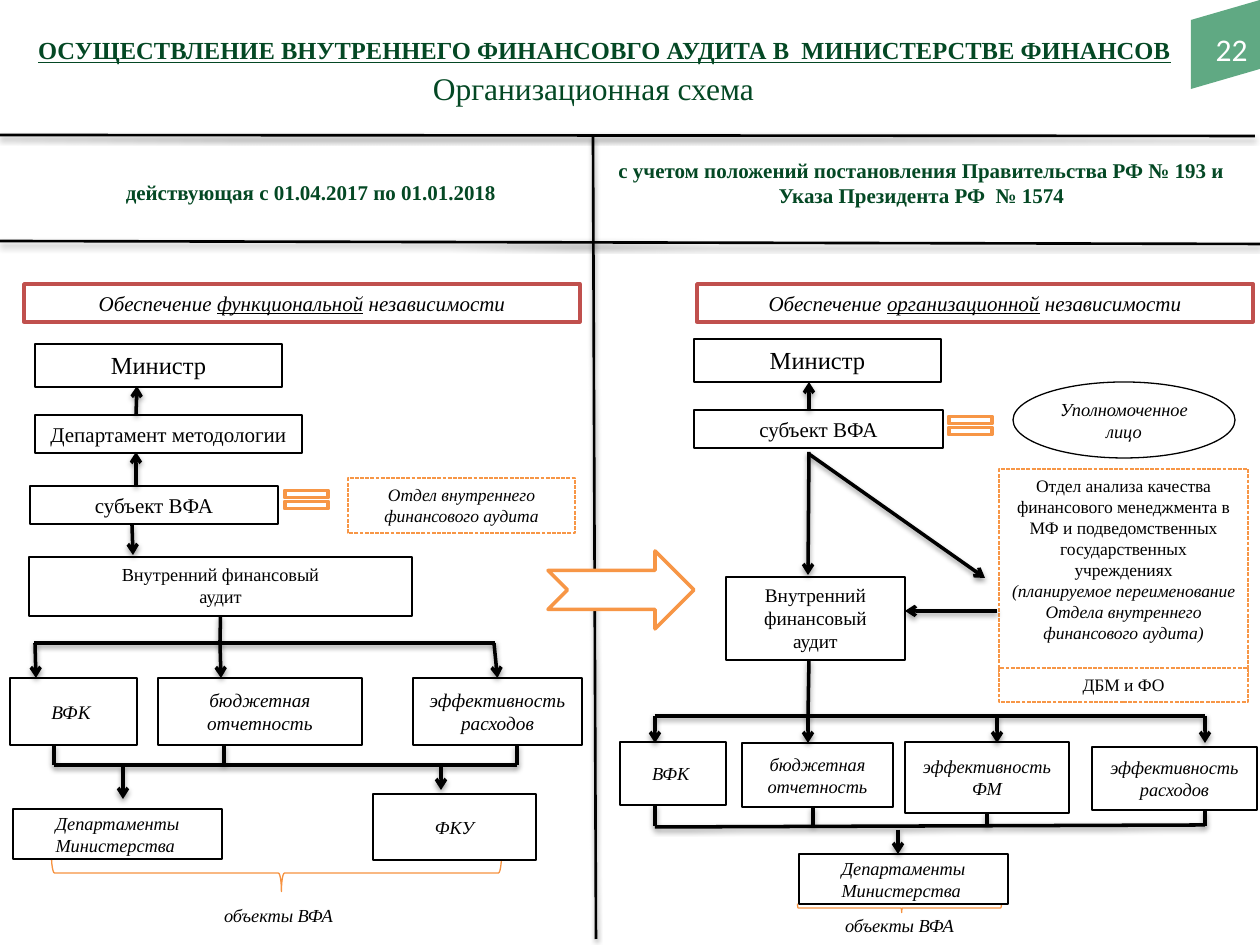
from dataclasses import dataclass, field
from typing import Optional

from lxml.etree import SubElement
from pptx import Presentation
from pptx.dml.color import RGBColor
from pptx.enum.dml import MSO_LINE_DASH_STYLE as Dash
from pptx.enum.shapes import MSO_CONNECTOR as Link, MSO_SHAPE as Kind
from pptx.enum.text import MSO_ANCHOR as Anchor, MSO_AUTO_SIZE as Fit, PP_ALIGN as Align
from pptx.oxml import parse_xml
from pptx.oxml.ns import nsdecls, qn
from pptx.util import Emu, Pt

SERIF = "Times New Roman"
BLACK, WHITE, GREEN = "000000", "FFFFFF", "044824"
ORANGE, BRACE_ORANGE, RED = "F79646", "F69240", "C0504D"
TOP, BOTTOM = 0, 2
SHADOW = (
    f'<a:effectLst {nsdecls("a")}><a:outerShdw blurRad="39370" dist="20320" dir="5400000"'
    ' rotWithShape="0"><a:srgbClr val="000000"><a:alpha val="38000"/></a:srgbClr>'
    "</a:outerShdw></a:effectLst>"
)


@dataclass(frozen=True)
class Words:
    """Paragraphs are strings, or tuples of (text, font overrides) runs."""
    paragraphs: tuple
    size: float
    font: dict = field(default_factory=dict)
    color: str = BLACK
    face: str = SERIF
    align: Align = Align.CENTER
    anchor: Anchor = Anchor.TOP


@dataclass(frozen=True)
class Box:
    area: tuple[int, int, int, int]
    words: Optional[Words] = None
    kind: Kind = Kind.RECTANGLE
    line: str = BLACK
    width: float = 0.75
    dashed: bool = False
    key: str = ""


@dataclass(frozen=True)
class Line:
    start: tuple[int, int]
    end: tuple[int, int]
    arrow: bool = False
    width: float = 2
    joined: Optional[tuple[str, int]] = None


def px(length: int) -> Emu:
    return Emu(round(length * 914400 / 126))


def rgb(color: str) -> RGBColor:
    return RGBColor.from_string(color)


def write(frame, words: Words) -> None:
    for name, value in {"word_wrap": True, "auto_size": Fit.NONE,
                        "vertical_anchor": words.anchor,
                        "margin_left": Pt(7.2), "margin_right": Pt(7.2),
                        "margin_top": Pt(3.6), "margin_bottom": Pt(3.6)}.items():
        setattr(frame, name, value)
    for number, runs in enumerate(words.paragraphs):
        paragraph = frame.add_paragraph() if number else frame.paragraphs[0]
        paragraph.alignment = words.align
        for text, changes in ((runs, {}),) if isinstance(runs, str) else runs:
            run = paragraph.add_run()
            run.text = text
            run.font.color.rgb = rgb(words.color)
            formats = {"name": words.face, "size": Pt(words.size)} | words.font | changes
            for name, value in formats.items():
                setattr(run.font, name, value)


def draw_box(slide, box: Box):
    shape = slide.shapes.add_shape(box.kind, *map(px, box.area))
    shape.shadow.inherit = False
    shape.fill.solid()
    shape.fill.fore_color.rgb = rgb(WHITE)
    shape.line.color.rgb = rgb(box.line)
    shape.line.width = Pt(box.width)
    if box.dashed:
        shape.line.dash_style = Dash.SQUARE_DOT
    if box.words:
        write(shape.text_frame, box.words)
    return shape


def draw_brace(slide, area: tuple[int, int, int, int]) -> None:
    brace = draw_box(slide, Box(area, kind=Kind.LEFT_BRACE, line=BRACE_ORANGE))
    brace.fill.background()
    brace.rotation = 270
    brace.adjustments[0], brace.adjustments[1] = 0.083, 0.511


def draw_line(slide, line: Line, boxes: dict) -> None:
    connector = slide.shapes.add_connector(Link.STRAIGHT, *map(px, line.start + line.end))
    connector.line.color.rgb = rgb(BLACK)
    connector.line.width = Pt(line.width)
    if line.arrow:
        SubElement(connector.line._get_or_add_ln(), qn("a:tailEnd"), type="arrow")
    connector._element.spPr.append(parse_xml(SHADOW))
    if line.joined:
        key, side = line.joined
        connector.end_connect(boxes[key], side)


def draw_text(slide, area: tuple[int, int, int, int], words: Words) -> None:
    write(slide.shapes.add_textbox(*map(px, area)).text_frame, words)


def plain(size: float, *paragraphs) -> Words:
    return Words(paragraphs, size)


def italic(size: float, text: str, anchor: Anchor = Anchor.MIDDLE) -> Words:
    return Words((text,), size, {"italic": True}, anchor=anchor)


def independence(kind: str) -> Words:
    runs = (("Обеспечение ", {}), (kind, {"underline": True}), (" независимости", {}))
    return Words((runs,), 12, {"italic": True})


AUDIT = ("Внутренний финансовый", "аудит")
DEPARTMENTS = italic(10.5, "Департаменты Министерства ")
QUALITY = plain(
    10,
    "Отдел анализа качества финансового менеджмента в МФ и подведомственных"
    " государственных учреждениях",
    (("(планируемое переименование Отдела внутреннего финансового аудита)",
      {"italic": True}),),
)
DIVIDERS = [Line((0, 241), (1260, 244), width=1.5),
            Line((596, 939), (593, 136), width=1.5),
            Line((0, 135), (1255, 136), width=1.5)]
BOXES = [
    # Current scheme
    Box((24, 284, 556, 38), independence("функциональной"), line=RED, width=2),
    Box((35, 344, 247, 43), plain(14, "Министр")),
    Box((35, 415, 267, 38), plain(12, "Департамент методологии")),
    Box((30, 486, 248, 38), plain(12, "субъект ВФА")),
    Box((277, 484, 59, 31), kind=Kind.MATH_EQUAL, line=ORANGE, width=2),
    Box((348, 478, 227, 55), italic(10, "Отдел внутреннего финансового аудита", Anchor.TOP),
        line=ORANGE, dashed=True),
    Box((29, 557, 383, 59), plain(10.5, *AUDIT), key="current audit"),
    Box((10, 678, 127, 67), italic(11, "ВФК ")),
    Box((158, 678, 204, 67), italic(11, "бюджетная отчетность")),
    Box((413, 678, 169, 67), italic(11, "эффективность расходов"), key="current spending"),
    Box((13, 809, 209, 50), DEPARTMENTS),
    Box((373, 794, 163, 66), italic(10.5, "ФКУ")),
    # Transition between the schemes
    Box((548, 551, 146, 78), kind=Kind.NOTCHED_RIGHT_ARROW, line=ORANGE, width=2),
    # New scheme
    Box((697, 284, 556, 38), independence("организационной"), line=RED, width=2),
    Box((694, 339, 247, 43), plain(14, "Министр")),
    Box((694, 410, 249, 38), plain(12, "субъект ВФА")),
    Box((941, 410, 59, 31), kind=Kind.MATH_EQUAL, line=ORANGE, width=2),
    Box((1013, 382, 222, 76), italic(10.5, "Уполномоченное лицо"), Kind.OVAL),
    Box((999, 469, 249, 204), QUALITY, line=ORANGE, dashed=True),
    Box((999, 668, 249, 34), plain(10, "ДБМ и ФО"), line=ORANGE, dashed=True),
    Box((726, 577, 179, 83), plain(11, *AUDIT)),
    Box((620, 742, 106, 63), italic(10.5, "ВФК ")),
    Box((742, 743, 151, 64), italic(10.5, "бюджетная отчетность")),
    Box((905, 742, 164, 71), italic(10.5, "эффективность ФМ"), key="new management"),
    Box((1092, 747, 165, 63), italic(10.5, "эффективность расходов")),
    Box((799, 854, 209, 50), DEPARTMENTS),
]
LINES = [
    # Current scheme: chain, split into directions, merge into objects
    Line((136, 415), (137, 386), True),
    Line((136, 486), (136, 452), True),
    Line((132, 524), (133, 555), True),
    Line((220, 643), (220, 616), joined=("current audit", BOTTOM)),
    Line((34, 643), (495, 643)),
    Line((35, 643), (36, 678), True),
    Line((220, 643), (221, 678), True),
    Line((494, 643), (497, 678), True, joined=("current spending", TOP)),
    *[Line((x, 765), (x, 745)) for x in (54, 224, 517)],
    Line((54, 765), (517, 765)),
    Line((123, 766), (123, 799), True),
    Line((441, 766), (441, 790), True),
    # New scheme: chain, split into directions, merge into objects
    Line((809, 410), (809, 382), True),
    Line((809, 452), (808, 575), True),
    Line((809, 454), (985, 578), True),
    Line((997, 611), (905, 611), True),
    Line((808, 716), (809, 660)),
    Line((655, 716), (1205, 716)),
    *[Line((x, 716), (x, 743), True) for x in (655, 808, 997, 1205)],
    *[Line((x, 826), (x, y)) for x, y in ((655, 805), (813, 807), (1205, 810))],
    Line((987, 826), (987, 813), joined=("new management", BOTTOM)),
    Line((655, 827), (1205, 825)),
    Line((898, 830), (898, 854), True),
]
BOLD = {"bold": True}
OBJECTS = italic(10.5, "объекты ВФА", Anchor.TOP)
TEXTS = [
    ((96, 63, 995, 50), Words(("Организационная схема",), 18, color=GREEN)),
    ((29, 173, 564, 68), Words(("действующая с 01.04.2017 по 01.01.2018",), 12, BOLD, GREEN)),
    ((588, 151, 667, 93),
     Words(("с учетом положений постановления Правительства РФ № 193 и"
            " Указа Президента РФ  № 1574",), 12, BOLD, GREEN)),
    ((194, 898, 169, 35), OBJECTS),
    ((815, 908, 169, 35), OBJECTS),
    ((1041, 24, 219, 43), Words(("22",), 18, color=WHITE, face="Calibri", align=Align.RIGHT)),
]


def main() -> None:
    deck = Presentation()
    deck.slide_width, deck.slide_height = px(1260), px(945)
    slide = deck.slides.add_slide(deck.slide_layouts[5])

    # Title
    title = slide.shapes.title
    title.left, title.top, title.width, title.height = map(px, (18, 29, 1173, 43))
    write(title.text_frame,
          Words(("ОСУЩЕСТВЛЕНИЕ ВНУТРЕННЕГО ФИНАНСОВГО АУДИТА В  МИНИСТЕРСТВЕ ФИНАНСОВ",),
                14, {"bold": True, "underline": True}, GREEN))

    # Page number flag
    outline = slide.shapes.build_freeform(px(1191), px(20))
    outline.add_line_segments([(px(x), px(y)) for x, y in ((1260, 0), (1260, 69), (1191, 89))])
    flag = outline.convert_to_shape()
    flag.shadow.inherit = False
    flag.fill.solid()
    flag.fill.fore_color.rgb = rgb("077A3E")
    SubElement(flag._element.spPr.find(".//" + qn("a:srgbClr")), qn("a:alpha"), val="64000")
    flag.line.fill.background()

    # Dividers and braces lie behind the boxes
    for divider in DIVIDERS:
        draw_line(slide, divider, {})
    for area in ((258, 648, 37, 450), (895, 806, 9, 204)):
        draw_brace(slide, area)

    # Scheme
    boxes = {}
    for box in BOXES:
        shape = draw_box(slide, box)
        if box.key:
            boxes[box.key] = shape
    for line in LINES:
        draw_line(slide, line, boxes)
    for area, words in TEXTS:
        draw_text(slide, area, words)

    deck.save("out.pptx")


if __name__ == "__main__":
    main()
